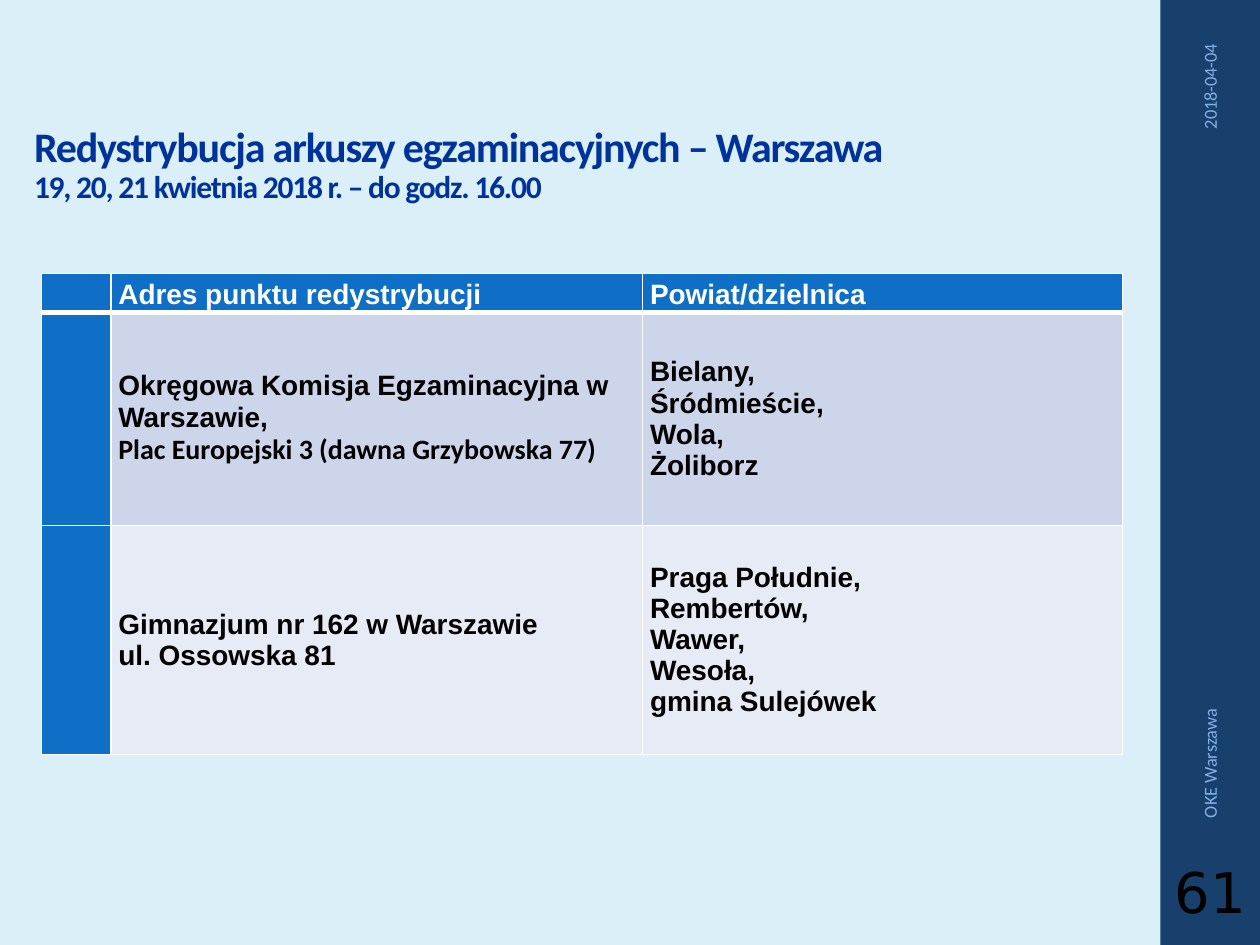
from lxml import etree
from pptx import Presentation
from pptx import util as u
from pptx.dml.color import RGBColor
from pptx.enum import shapes, text
from pptx.oxml.ns import qn

COLORS = {
    "background": "DBEFF9", "sidebar": "17406D", "title": "003399",
    "header": "0F6FC6", "first_row": "CCD5EA", "second_row": "E7EBF5",
    "footer": "82B1E5", "white": "FFFFFF", "black": "000000",
}
WIDTH, HEIGHT = 10, 7.5
SIDEBAR_LEFT = 9.21

TITLE = [("Redystrybucja arkuszy egzaminacyjnych – Warszawa", 24),
         ("19, 20, 21 kwietnia 2018 r. – do godz. 16.00", 18)]
HEADINGS = ["", "Adres punktu redystrybucji", "Powiat/dzielnica"]
POINTS = [
    ["", "Okręgowa Komisja Egzaminacyjna w Warszawie,\nPlac Europejski 3 (dawna Grzybowska 77)",
     "Bielany,\nŚródmieście,\nWola,\nŻoliborz"],
    ["", "Gimnazjum nr 162 w Warszawie\nul. Ossowska 81",
     "Praga Południe,\nRembertów,\nWawer,\nWesoła,\ngmina Sulejówek"],
]
COLUMN_WIDTHS = [0.55, 4.22, 3.81]
ROW_HEIGHTS = [0.31, 1.69, 1.82]


def color(name):
    return RGBColor.from_string(COLORS[name])


def paint(item, name):
    item.fill.solid()
    item.fill.fore_color.rgb = color(name)


def style(paragraph, size, font, color_name, bold=False):
    for run in paragraph.runs:
        run.font.size = u.Pt(size)
        run.font.name = font
        run.font.bold = bold
        run.font.color.rgb = color(color_name)


def inches(box):
    return [u.Inches(length) for length in box]


def add_title(slide, box):
    title = slide.shapes.title
    title.left, title.top, title.width, title.height = inches(box)
    frame = title.text_frame
    frame.text = "\n".join(line for line, _ in TITLE)
    frame.word_wrap = True
    frame.auto_size = text.MSO_AUTO_SIZE.NONE
    frame.vertical_anchor = text.MSO_ANCHOR.BOTTOM
    for paragraph, (_, size) in zip(frame.paragraphs, TITLE):
        paragraph.alignment = text.PP_ALIGN.LEFT
        paragraph.line_spacing = 0.9
        paragraph.space_before = u.Pt(0)
        style(paragraph, size, "Calibri", "title", bold=True)
        for run in paragraph.runs:
            run.font._element.set("spc", "-70")


def add_borders(cell, bottom_width):
    """Draw white cell borders; call before the cell is filled."""
    properties = cell._tc.get_or_add_tcPr()
    for side, width in zip("LRTB", (1, 1, 1, bottom_width)):
        line = etree.SubElement(properties, qn(f"a:ln{side}"), w=str(u.Pt(width)))
        fill = etree.SubElement(line, qn("a:solidFill"))
        etree.SubElement(fill, qn("a:srgbClr"), val=COLORS["white"])


def add_points_table(slide, box):
    rows = [HEADINGS] + POINTS
    table = slide.shapes.add_table(len(rows), len(HEADINGS), *inches(box)).table
    for column, width in zip(table.columns, COLUMN_WIDTHS):
        column.width = u.Inches(width)
    for row, height in zip(table.rows, ROW_HEIGHTS):
        row.height = u.Inches(height)
    fills = ["header", "first_row", "second_row"]
    for r, entries in enumerate(rows):
        for c, entry in enumerate(entries):
            cell = table.cell(r, c)
            cell.text = entry
            cell.vertical_anchor = text.MSO_ANCHOR.MIDDLE
            cell.margin_left = cell.margin_right = u.Inches(0.06)
            cell.margin_top = cell.margin_bottom = 0
            add_borders(cell, 1 if r else 3)
            paint(cell, fills[r] if c else "header")
            for paragraph in cell.text_frame.paragraphs:
                paragraph.line_spacing = 1.0 if r else 1.15
                font = "Calibri" if paragraph.text.startswith("Plac") else "Arial"
                style(paragraph, 16, font, "black" if r else "white", bold=True)


def add_label(slide, box, label, size, font, color_name, alignment, rotation=0):
    label_box = slide.shapes.add_textbox(*inches(box))
    label_box.rotation = rotation
    frame = label_box.text_frame
    frame.text = label
    frame.word_wrap = True
    frame.vertical_anchor = text.MSO_ANCHOR.MIDDLE
    frame.paragraphs[0].alignment = alignment
    style(frame.paragraphs[0], size, font, color_name)
    return frame


def add_sidebar(slide, box):
    left, top, width, height = box
    band = slide.shapes.add_shape(shapes.MSO_SHAPE.RECTANGLE, *inches(box))
    band.shadow.inherit = False
    band.line.fill.background()
    paint(band, "sidebar")

    middle = left + 0.39
    for label, length, center, alignment in (
            ("2018-04-04", 2.08, 1.29, text.PP_ALIGN.RIGHT),
            ("OKE Warszawa", 3.92, 4.63, text.PP_ALIGN.LEFT)):
        label_box = (middle - length / 2, top + center - 0.15, length, 0.3)
        add_label(slide, label_box, label, 10.5, "Calibri", "footer", alignment, 270)

    number = add_label(slide, (left + 0.02, top + height * 0.9, 0.75, 0.65), "61",
                       32, "DejaVu Sans", "black", text.PP_ALIGN.CENTER)
    number.margin_left = number.margin_right = u.Inches(0.03)


def main():
    deck = Presentation()
    deck.slide_width, deck.slide_height = inches((WIDTH, HEIGHT))
    slide = deck.slides.add_slide(deck.slide_layouts.get_by_name("Title Only"))
    paint(slide.background, "background")
    add_title(slide, (0.17, 0.51, 8.58, 1.17))
    add_points_table(slide, (0.33, 2.17, sum(COLUMN_WIDTHS), sum(ROW_HEIGHTS)))
    add_sidebar(slide, (SIDEBAR_LEFT, 0, WIDTH - SIDEBAR_LEFT, HEIGHT))
    deck.save("out.pptx")


if __name__ == "__main__":
    main()
